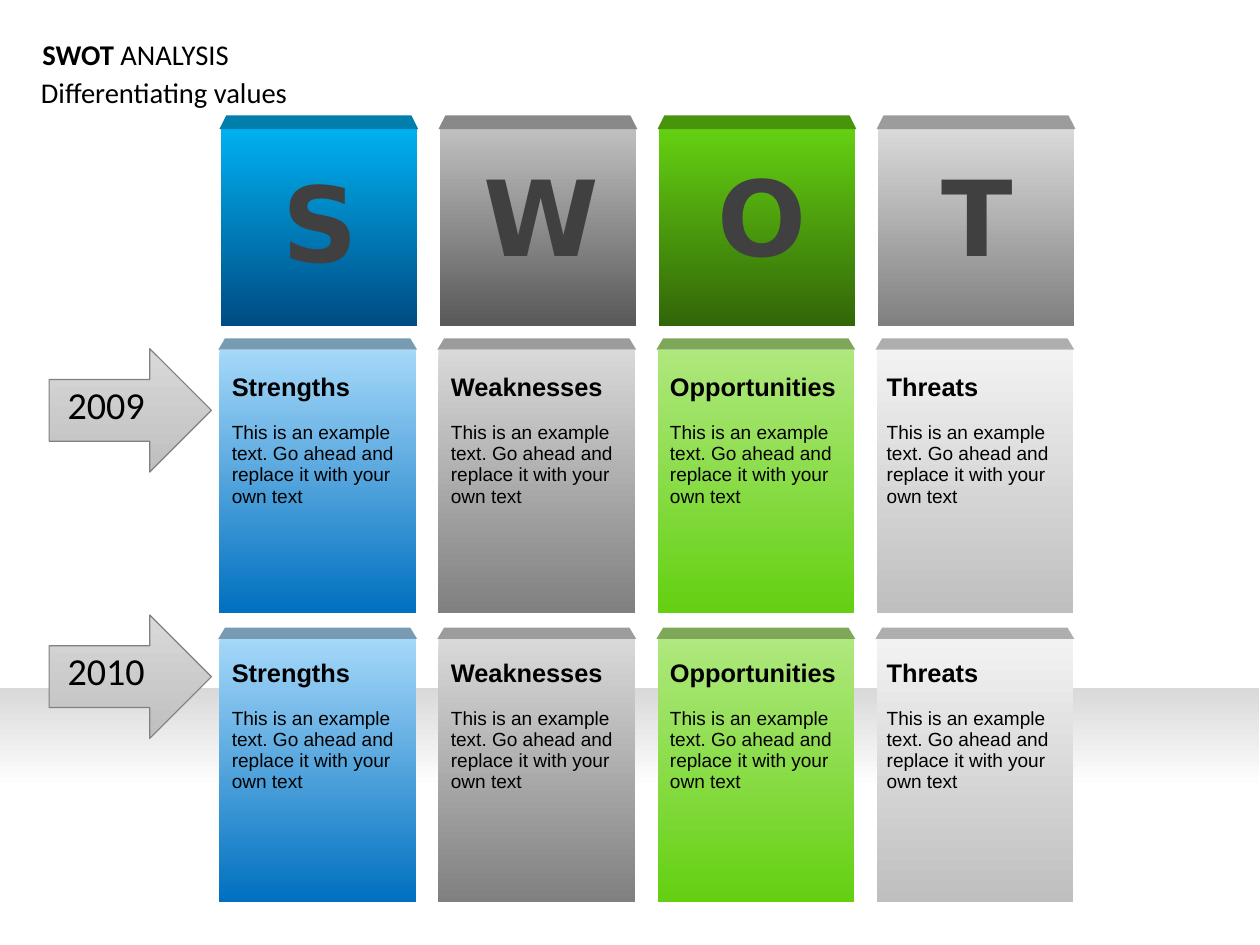
import dataclasses
from typing import Any

import pptx
import pptx.dml.color
import pptx.enum.shapes
import pptx.enum.text
import pptx.util

Inches = pptx.util.Inches
Pt = pptx.util.Pt
RGBColor = pptx.dml.color.RGBColor
Kind = pptx.enum.shapes.MSO_SHAPE
Align = pptx.enum.text.PP_ALIGN
Anchor = pptx.enum.text.MSO_ANCHOR
Fit = pptx.enum.text.MSO_AUTO_SIZE

BLACK = RGBColor(0x00, 0x00, 0x00)
WHITE = RGBColor(0xFF, 0xFF, 0xFF)
DARK = RGBColor(0x40, 0x40, 0x40)
STEEL = RGBColor(0x59, 0x59, 0x59)
GRAY = RGBColor(0x80, 0x80, 0x80)
ASH = RGBColor(0x89, 0x89, 0x89)
SLATE = RGBColor(0x9C, 0x9C, 0x9C)
DOVE = RGBColor(0xAE, 0xAE, 0xAE)
SILVER = RGBColor(0xBF, 0xBF, 0xBF)
PALE = RGBColor(0xD9, 0xD9, 0xD9)
MIST = RGBColor(0xF2, 0xF2, 0xF2)
SKY = RGBColor(0x00, 0xB0, 0xF0)
NAVY = RGBColor(0x00, 0x4C, 0x84)
TEAL = RGBColor(0x00, 0x7F, 0xAD)
ICE = RGBColor(0xA5, 0xD8, 0xF9)
BLUE = RGBColor(0x00, 0x70, 0xC0)
HAZE = RGBColor(0x77, 0x9B, 0xB3)
LIME = RGBColor(0x64, 0xD0, 0x11)
MOSS = RGBColor(0x32, 0x66, 0x09)
LEAF = RGBColor(0x48, 0x95, 0x0C)
MINT = RGBColor(0xAF, 0xE8, 0x7E)
SAGE = RGBColor(0x7E, 0xA7, 0x5A)

LETTER = {"name": "DejaVu Sans", "size": Pt(66), "bold": True}
HEAD = {"name": "Arial", "size": Pt(16), "bold": True}
BODY = {"name": "Arial", "size": Pt(12), "bold": False}
YEAR = {"name": "Calibri", "size": Pt(24), "bold": False}
PLAIN = {"name": "Calibri", "size": Pt(18), "bold": False}
STRONG = {**PLAIN, "bold": True}

SAMPLE = "This is an example text. Go ahead and replace it with your own text"
SIDE = 1.72
LEFT, RIGHT = 1.93, 7.68


@dataclasses.dataclass
class Paint:
    top: RGBColor
    base: RGBColor
    cap: RGBColor


@dataclasses.dataclass
class Theme:
    name: str
    x: float
    y: float
    tile: Paint
    card: Paint
    shift: float = 0


@dataclasses.dataclass
class Row:
    year: str
    arrow: float
    card: float
    text: float


THEMES = [
    Theme("Strengths", 2.37, 1.43, Paint(SKY, NAVY, TEAL), Paint(ICE, BLUE, HAZE)),
    Theme("Weaknesses", 4.13, 1.38, Paint(SILVER, STEEL, ASH), Paint(PALE, GRAY, SLATE)),
    Theme("Opportunities", 6.18, 1.38, Paint(LIME, MOSS, LEAF), Paint(MINT, LIME, SAGE)),
    Theme("Threats", 8.14, 1.38, Paint(PALE, GRAY, SLATE), Paint(MIST, SILVER, DOVE), -0.02),
]
ROWS = [Row("2009", 3.05, 3.06, 3.22), Row("2010", 5.38, 5.59, 5.72)]
STEP = (RIGHT - LEFT) / (len(THEMES) - 1)


def block(slide: Any, kind: Any, x: float, y: float, w: float, h: float,
          first: RGBColor, last: RGBColor, start: float = 0, angle: int = 270) -> Any:
    shape = slide.shapes.add_shape(kind, Inches(x), Inches(y), Inches(w), Inches(h))
    shape.shadow.inherit = False
    shape.fill.gradient()
    shape.fill.gradient_angle = angle
    for stop, tone, place in zip(shape.fill.gradient_stops, (first, last), (start, 1)):
        stop.color.rgb = tone
        stop.position = place
    shape.line.fill.background()
    return shape


def box(slide: Any, x: float, y: float, h: float, lip: float, paint: Paint) -> None:
    block(slide, Kind.RECTANGLE, x, y, SIDE, h, paint.top, paint.base)
    edge = slide.shapes.build_freeform(Inches(x - 0.01), Inches(y))
    edge.add_line_segments([
        (Inches(x + 0.05), Inches(y - lip)),
        (Inches(x + SIDE - 0.05), Inches(y - lip)),
        (Inches(x + SIDE + 0.01), Inches(y)),
    ])
    cap = edge.convert_to_shape()
    cap.shadow.inherit = False
    cap.fill.solid()
    cap.fill.fore_color.rgb = paint.cap
    cap.line.fill.background()


def write(para: Any, text: str, style: dict[str, Any], tone: RGBColor = BLACK) -> None:
    para.line_spacing = 0.93
    run = para.add_run()
    run.text = text
    for key, value in style.items():
        setattr(run.font, key, value)
    run.font.color.rgb = tone


def frame(slide: Any, x: float, y: float, w: float, h: float, wrap: bool = True) -> Any:
    area = slide.shapes.add_textbox(Inches(x), Inches(y), Inches(w), Inches(h))
    area.text_frame.word_wrap = wrap
    return area.text_frame


def heading(slide: Any) -> None:
    title = slide.shapes.title
    spot = {"left": 0.27, "top": 0.3, "width": 1.85, "height": 0.39}
    for key, value in spot.items():
        setattr(title, key, Inches(value))
    form = {"word_wrap": False, "auto_size": Fit.NONE, "vertical_anchor": Anchor.TOP}
    for key, value in form.items():
        setattr(title.text_frame, key, value)
    para = title.text_frame.paragraphs[0]
    para.alignment = Align.LEFT
    write(para, "SWOT ", STRONG)
    write(para, "ANALYSIS", PLAIN)
    under = frame(slide, 0.26, 0.63, 2.38, 0.39, False)
    write(under.paragraphs[0], "Differentiating values", PLAIN)


def column(slide: Any, x: float, theme: Theme) -> None:
    box(slide, x, 1.13, SIDE, 0.12, theme.tile)
    sign = frame(slide, theme.x, theme.y, 0.89, 1.13)
    write(sign.paragraphs[0], theme.name[0], LETTER, DARK)
    for row in ROWS:
        box(slide, x - 0.01, row.card, 2.3, 0.1, theme.card)
        note = frame(slide, x + theme.shift, row.text, 1.75, 1.58)
        write(note.paragraphs[0], theme.name, HEAD)
        para = note.add_paragraph()
        para.space_before = Pt(12.8)
        write(para, SAMPLE, BODY)


def marker(slide: Any, row: Row) -> None:
    arrow = block(slide, Kind.RIGHT_ARROW, 0.43, row.arrow, 1.42, 1.08, PALE, SILVER)
    arrow.line.color.rgb = GRAY
    arrow.line.width = Pt(0.75)
    para = frame(slide, 0.43, row.arrow + 0.27, 1, 0.48).paragraphs[0]
    para.alignment = Align.CENTER
    write(para, row.year, YEAR)


def main() -> None:
    deck = pptx.Presentation()
    deck.slide_width = Pt(793.75)
    deck.slide_height = Pt(595.25)
    deck.element.sldSz.attrib.pop("type", None)
    slide = deck.slides.add_slide(deck.slide_layouts[5])
    block(slide, Kind.RECTANGLE, 0, 6.02, 11.02, 2.24, WHITE, PALE, 0.61, 90)
    heading(slide)
    for spot, theme in enumerate(THEMES):
        column(slide, LEFT + spot * STEP, theme)
    for row in ROWS:
        marker(slide, row)
    deck.save("out.pptx")


if __name__ == "__main__":
    main()
